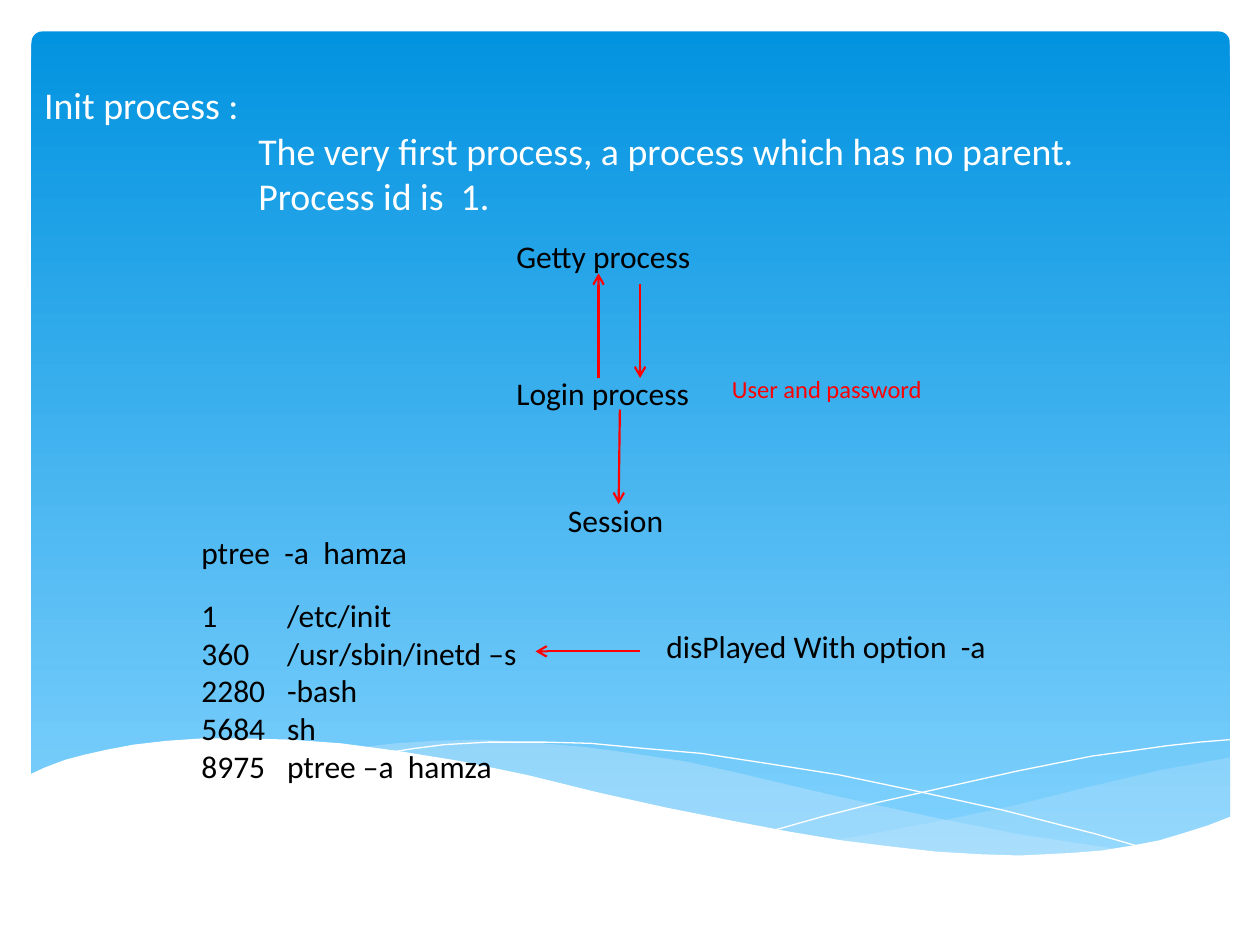
from lxml.etree import SubElement
from pptx import Presentation
from pptx.dml.color import RGBColor
from pptx.enum.shapes import MSO_CONNECTOR, MSO_SHAPE
from pptx.enum.text import MSO_ANCHOR, MSO_AUTO_SIZE, PP_ALIGN
from pptx.oxml.ns import qn
from pptx.util import Inches, Pt

BLACK, RED, WHITE, PALE = "000000", "FF0000", "FFFFFF", "C6E7FC"

TITLE = [  # text, left indent
    ("Init process :", 0),
    ("The very first process, a process which has no parent.", 1.7),
    ("Process id is  1.", 1.7),
]
LABELS = [  # text, left, top, width, height, size, colour
    ("Getty process", 4, 1.83, 1.67, 0.4, 18, BLACK),
    ("Login process", 4, 2.92, 1.67, 0.4, 18, BLACK),
    ("Session", 4.41, 3.93, 1, 0.4, 18, BLACK),
    ("User and password", 5.71, 2.92, 1.79, 0.34, 14, RED),
    ("ptree  -a  hamza", 1.5, 4.18, 1.9, 0.4, 18, BLACK),
    ("disPlayed With option  -a", 5.19, 4.93, 2.88, 0.4, 18, BLACK),
]
TREE = [
    (1, "/etc/init"),
    (360, "/usr/sbin/inetd –s"),
    (2280, "-bash"),
    (5684, "sh"),
    (8975, "ptree –a  hamza"),
]
ARROWS = [  # from x, y, to x, y
    (5.08, 2.25, 5.08, 3),
    (4.75, 3, 4.75, 2.17),
    (4.92, 3.25, 4.91, 4),
    (5.08, 5.17, 4.25, 5.17),
]
RIGHT_WAVE = [
    (9.77, 6.01), (9.5, 6.06), (9.22, 6.11), (8.92, 6.18), (8.62, 6.25),
    (8.06, 6.39), (7.54, 6.5), (7.07, 6.59), (6.62, 6.67), (6.92, 6.71),
    (7.19, 6.74), (7.46, 6.77), (7.7, 6.79), (8.15, 6.8), (8.45, 6.79),
    (8.73, 6.76), (8.98, 6.72), (9.22, 6.67), (9.51, 6.59), (9.77, 6.49),
]
MID_WAVE = [
    (8.94, 6.75), (8.67, 6.71), (8.08, 6.62), (7.42, 6.49), (6.69, 6.33),
    (6.3, 6.24), (5.84, 6.13), (5.42, 6.04), (5.02, 5.98), (4.65, 5.93),
    (4.2, 5.89), (3.8, 5.87), (3.45, 5.88), (3.14, 5.9), (2.87, 5.93),
    (3.23, 5.98), (3.63, 6.04), (4.05, 6.13), (4.5, 6.24), (5.3, 6.42),
    (6.02, 6.57), (6.51, 6.66), (6.96, 6.72), (7.37, 6.77), (7.74, 6.79),
    (8.08, 6.8), (8.39, 6.8), (8.68, 6.78),
]
FALL_LINE = [
    (3.1, 5.97), (3.29, 5.94), (3.53, 5.91), (3.88, 5.89), (4.33, 5.89),
    (4.69, 5.9), (5.11, 5.94), (5.57, 5.98), (6.09, 6.06), (6.66, 6.15),
    (7.28, 6.28), (7.96, 6.43), (8.7, 6.62), (9.08, 6.73),
]
RISE_LINE = [
    (6.14, 6.59), (6.53, 6.48), (6.96, 6.37), (7.49, 6.25), (8.07, 6.12),
    (8.67, 6), (8.97, 5.96), (9.25, 5.92), (9.52, 5.89), (9.76, 5.87),
]
FRONT_WAVE = [
    (9.77, 6.48), (9.59, 6.55), (9.4, 6.61), (9.2, 6.67), (8.99, 6.71),
    (8.75, 6.75), (8.5, 6.77), (8.09, 6.79), (7.78, 6.78), (7.44, 6.76),
    (7.08, 6.72), (6.68, 6.67), (6.26, 6.6), (5.79, 6.51), (5.29, 6.41),
    (4.75, 6.29), (4.18, 6.15), (3.65, 6.04), (3.16, 5.96), (2.71, 5.9),
    (2.3, 5.87), (1.93, 5.86), (1.61, 5.86), (1.32, 5.88), (1.06, 5.91),
    (0.85, 5.95), (0.67, 5.99), (0.52, 6.03), (0.36, 6.09), (0.23, 6.15),
    (0.23, 7.31), (9.77, 7.31),
]
WAVES = [  # points, fill, opacity in percent; no fill means a white line
    (RIGHT_WAVE, PALE, 29),
    (MID_WAVE, PALE, 40),
    (FALL_LINE, None, 100),
    (RISE_LINE, None, 100),
    (FRONT_WAVE, WHITE, 100),
]


def paint(color, hue):
    color.rgb = RGBColor.from_string(hue)


def style(para, size, hue):
    for run in para.runs:
        run.font.name = "Calibri"
        run.font.size = Pt(size)
        paint(run.font.color, hue)


def indent(para, left, first=0):
    props = para._p.get_or_add_pPr()
    props.set("marL", str(Inches(left)))
    props.set("indent", str(Inches(first)))


def add_sky(shapes):
    sky = shapes.add_shape(MSO_SHAPE.ROUNDED_RECTANGLE, Inches(0.25),
                           Inches(0.25), Inches(9.51), Inches(6.6))
    sky.adjustments[0] = 0.013
    sky.shadow.inherit = False
    sky.line.fill.background()
    sky.fill.gradient()
    sky.fill.gradient_angle = 270
    for stop, hue in zip(sky.fill.gradient_stops, ("0293E0", "83D3FE")):
        paint(stop.color, hue)


def add_wave(shapes, points, hue, alpha):
    start, *rest = [(Inches(x), Inches(y)) for x, y in points]
    pen = shapes.build_freeform(*start)
    pen.add_line_segments(rest, close=hue is not None)
    wave = pen.convert_to_shape()
    wave.shadow.inherit = False
    if hue is None:
        wave.fill.background()
        paint(wave.line.color, WHITE)
        wave.line.width = 0
        return
    wave.line.fill.background()
    wave.fill.solid()
    paint(wave.fill.fore_color, hue)
    if alpha < 100:
        tint = wave.element.spPr.find(qn("a:solidFill"))[0]
        SubElement(tint, qn("a:alpha"), val=str(alpha * 1000))


def add_label(shapes, text, x, y, w, h, size, hue):
    box = shapes.add_textbox(Inches(x), Inches(y), Inches(w), Inches(h))
    frame = box.text_frame
    frame.word_wrap = False
    frame.auto_size = MSO_AUTO_SIZE.SHAPE_TO_FIT_TEXT
    frame.text = text
    for para in frame.paragraphs:
        style(para, size, hue)
    return frame


def add_arrow(shapes, *ends):
    arrow = shapes.add_connector(MSO_CONNECTOR.STRAIGHT, *map(Inches, ends))
    paint(arrow.line.color, RED)
    arrow.line.width = Pt(1.25)
    SubElement(arrow.line._get_or_add_ln(), qn("a:tailEnd"), type="arrow")
    SubElement(arrow.element.spPr, qn("a:effectLst"))


def set_title(title):
    title.left, title.top = Inches(0.25), Inches(0.65)
    title.width, title.height = Inches(10.08), Inches(1.83)
    frame = title.text_frame
    frame.word_wrap = True
    frame.auto_size = MSO_AUTO_SIZE.NONE
    frame.vertical_anchor = MSO_ANCHOR.TOP
    frame.margin_top = 0
    frame.text = "\n".join(text for text, _ in TITLE)
    for para, (_, left) in zip(frame.paragraphs, TITLE):
        para.alignment = PP_ALIGN.LEFT
        para.line_spacing = 1.0
        para.space_before = Pt(0)
        indent(para, left)
        style(para, 21.6, WHITE)


def main():
    deck = Presentation()
    deck.slide_width, deck.slide_height = Inches(10), Inches(7.5)
    slide = deck.slides.add_slide(deck.slide_layouts[5])
    shapes = slide.shapes
    title = shapes.title
    add_sky(shapes)
    for wave in WAVES:
        add_wave(shapes, *wave)
    title.element.getparent().append(title.element)  # bring to front
    set_title(title)
    for label in LABELS:
        add_label(shapes, *label)
    rows = "\n".join(f"{pid}\t{name}" for pid, name in TREE)
    tree = add_label(shapes, rows, 1.5, 4.68, 3.42, 1.62, 18, BLACK)
    tree.word_wrap = True
    for para in tree.paragraphs:
        indent(para, 0.68, -0.68)
    for arrow in ARROWS:
        add_arrow(shapes, *arrow)
    deck.save("out.pptx")


if __name__ == "__main__":
    main()
